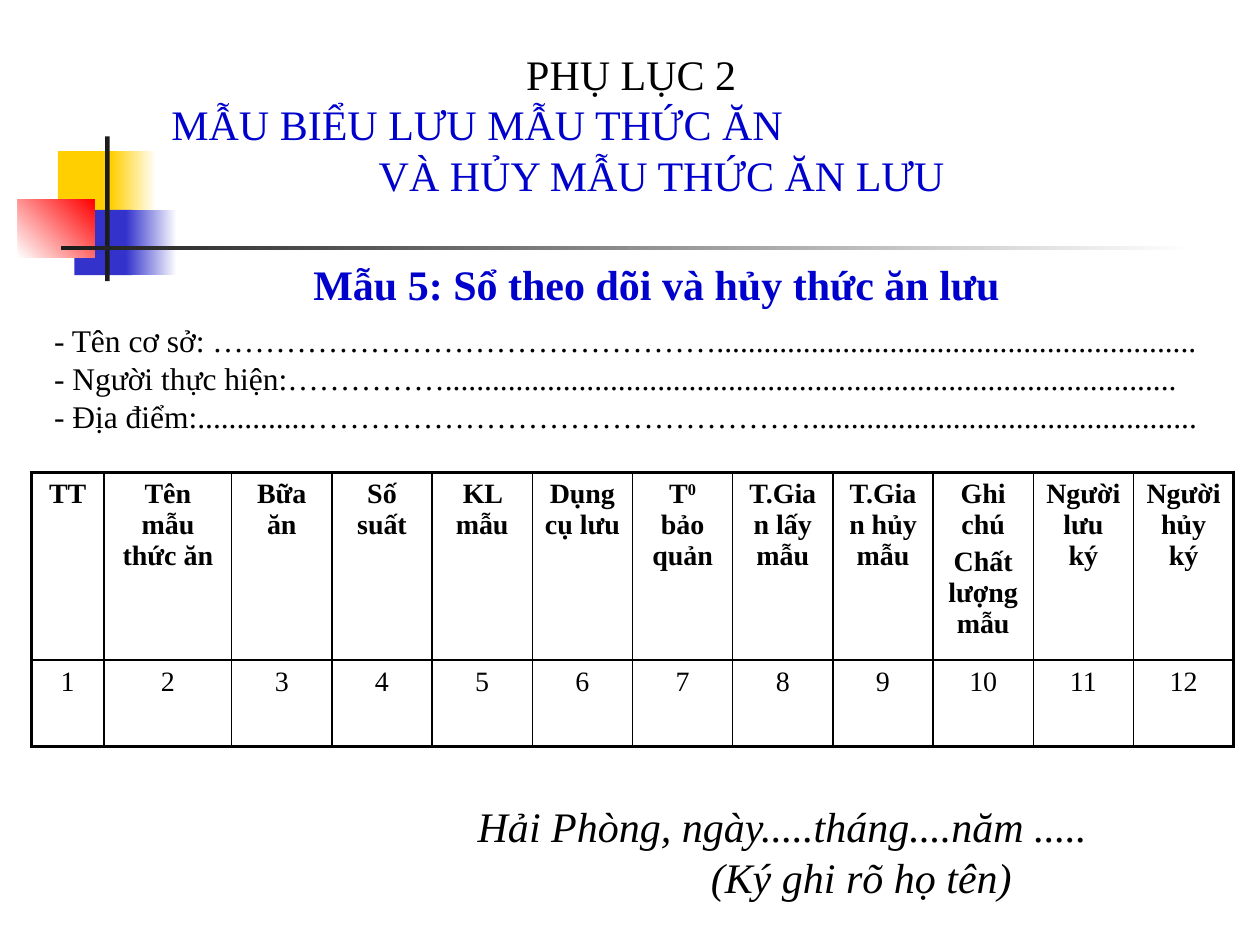
from pptx import Presentation
from pptx.dml.color import RGBColor
from pptx.enum.shapes import MSO_SHAPE
from pptx.enum.text import MSO_ANCHOR, MSO_AUTO_SIZE, PP_ALIGN
from pptx.oxml.ns import qn
from pptx.util import Cm, Pt
from lxml.etree import SubElement

COLORS = {"black": "000000", "blue": "0000CC", "white": "FFFFFF", "yellow": "FFCF01",
          "indigo": "3333CC", "red": "FF0000", "dark": "1C1C1C"}


def add_text(para, text, size, color="black", bold=False, italic=False):
    span = para.add_run()
    span.text = text
    span.font.name = "Times New Roman"
    span.font.size = Pt(size)
    span.font.bold = bold
    span.font.italic = italic
    span.font.color.rgb = RGBColor.from_string(COLORS[color])
    return span


def prepare_frame(box):
    frame = box.text_frame
    frame.word_wrap = True
    frame.auto_size = MSO_AUTO_SIZE.NONE
    frame.vertical_anchor = MSO_ANCHOR.TOP
    return frame


deck = Presentation()
deck.slide_width, deck.slide_height = Cm(25.4), Cm(19.05)
page = deck.slides.add_slide(deck.slide_layouts[5])

decorations = [
    (1.17, 3.05, 1.22, 1.32, ["yellow"], 0),
    (2.24, 3.05, 0.91, 1.32, ["yellow", "white"], 0),
    (1.5, 4.23, 1.17, 1.32, ["indigo"], 0),
    (2.54, 4.23, 1.02, 1.32, ["indigo", "white"], 0),
    (0.36, 4.02, 1.55, 1.17, ["white", "red"], 45),
    (2.12, 2.75, 0.09, 2.92, ["dark"], 0),
    (1.23, 4.95, 22.86, 0.09, ["dark", "white"], 0),
]
for left, top, width, height, colors, angle in decorations:
    block = page.shapes.add_shape(MSO_SHAPE.RECTANGLE, Cm(left), Cm(top), Cm(width), Cm(height))
    block.shadow.inherit = False
    block.line.fill.background()
    if len(colors) == 1:
        block.fill.solid()
        block.fill.fore_color.rgb = RGBColor.from_string(COLORS[colors[0]])
    else:
        block.fill.gradient()
        block.fill.gradient_angle = angle
        for stop, color in zip(block.fill.gradient_stops, colors):
            stop.color.rgb = RGBColor.from_string(COLORS[color])

title = page.shapes.title
title.left, title.top, title.width, title.height = Cm(3.2), Cm(0.85), Cm(19.05), Cm(3.3)
title_frame = prepare_frame(title)
para = title_frame.paragraphs[0]
para.alignment = PP_ALIGN.CENTER
add_text(para, "PHỤ LỤC 2", 24)

signature = page.shapes.add_textbox(Cm(9.38), Cm(16.02), Cm(15.24), Cm(2.29))
hanging_lines = [
    (title_frame.add_paragraph(), 4.18, "blue", False,
     ["MẪU BIỂU LƯU MẪU THỨC ĂN", "VÀ HỦY MẪU THỨC ĂN LƯU"]),
    (prepare_frame(signature).paragraphs[0], 4.7, "black", True,
     ["Hải Phòng, ngày.....tháng....năm .....", "(Ký ghi rõ họ tên)"]),
]
for para, indent, color, italic, (first, second) in hanging_lines:
    para.alignment = PP_ALIGN.LEFT
    props = para._p.get_or_add_pPr()
    props.set("marL", str(Cm(indent)))
    props.set("indent", str(-Cm(indent)))
    add_text(para, first, 24, color, italic=italic)
    para.add_line_break()
    add_text(para, second, 24, color, italic=italic)

subtitle = page.shapes.add_textbox(Cm(3.61), Cm(5.08), Cm(19.25), Cm(1.27))
para = prepare_frame(subtitle).paragraphs[0]
para.alignment = PP_ALIGN.CENTER
add_text(para, "Mẫu 5: Sổ theo dõi và hủy thức ăn lưu", 24, "blue", bold=True)

form_lines = [
    "- Tên cơ sở: …………………………………………" + "." * 61,
    "- Người thực hiện:……………" + "." * 93,
    "- Địa điểm:" + "." * 14 + "…………………………………………" + "." * 49,
]
form = page.shapes.add_textbox(Cm(0.84), Cm(6.35), Cm(23.7), Cm(2.54))
form_frame = prepare_frame(form)
for index, line in enumerate(form_lines):
    para = form_frame.add_paragraph() if index else form_frame.paragraphs[0]
    add_text(para, line, 18)

headers = [["TT"], ["Tên mẫu thức ăn"], ["Bữa ăn"], ["Số suất"], ["KL mẫu"], ["Dụng cụ lưu"],
           ["T^0^ bảo quản"], ["T.Gian lấy mẫu"], ["T.Gian hủy mẫu"],
           ["Ghi chú", "Chất lượng mẫu"], ["Người lưu ký"], ["Người hủy ký"]]
rows = [headers, [[str(number)] for number in range(1, 13)]]
widths = [1.47, 2.57] + [2.02] * 10
heights = [3.78, 1.75]
table = page.shapes.add_table(len(rows), len(widths), Cm(0.63), Cm(9.52),
                              Cm(sum(widths)), Cm(sum(heights))).table
table.first_row = False
table.horz_banding = False
for column, width in zip(table.columns, widths):
    column.width = Cm(width)
for row, height in zip(table.rows, heights):
    row.height = Cm(height)

for r, row in enumerate(rows):
    for c, texts in enumerate(row):
        cell = table.cell(r, c)
        for index, text in enumerate(texts):
            para = cell.text_frame.add_paragraph() if index else cell.text_frame.paragraphs[0]
            para.alignment = PP_ALIGN.CENTER
            para.space_before = Pt(3.2 * index)
            for part, piece in enumerate(text.split("^")):
                span = add_text(para, piece, 16, bold=r == 0)
                if part == 1:
                    span.font._element.set("baseline", "30000")
        props = cell._tc.get_or_add_tcPr()
        outer_edges = {"lnL": c == 0, "lnR": c == len(widths) - 1,
                       "lnT": r == 0, "lnB": r == len(rows) - 1}
        for edge, outer in outer_edges.items():
            border = SubElement(props, qn("a:" + edge), w=str(Pt(2.25 if outer else 1)))
            SubElement(SubElement(border, qn("a:solidFill")), qn("a:srgbClr"), val=COLORS["black"])
        cell.fill.background()

deck.save("out.pptx")
